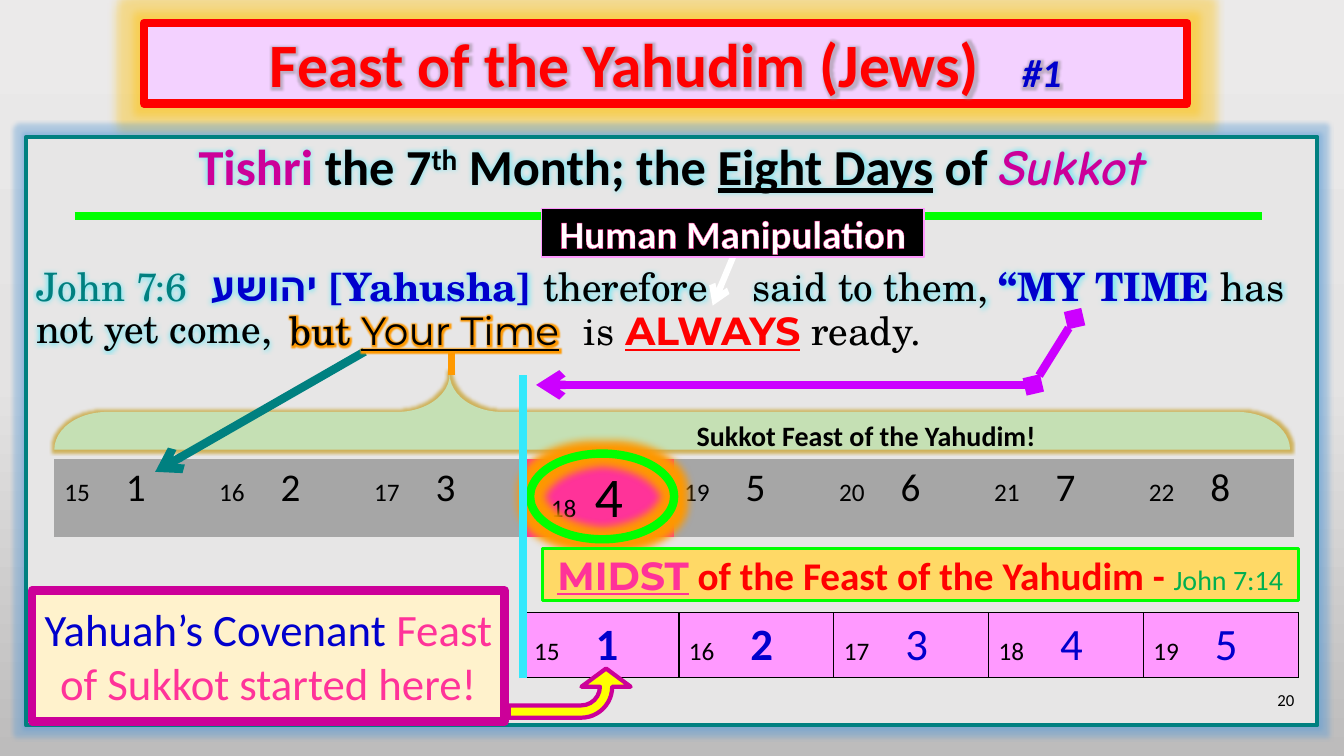
import copy
from dataclasses import dataclass

import pptx
import pptx.dml.color
import pptx.enum.shapes
import pptx.enum.text
import pptx.oxml
import pptx.oxml.ns
import pptx.util
from pptx.util import Cm

RGBColor = pptx.dml.color.RGBColor
SHAPE = pptx.enum.shapes.MSO_SHAPE
ALIGN = pptx.enum.text.PP_ALIGN
ANCHOR = pptx.enum.text.MSO_ANCHOR
qn = pptx.oxml.ns.qn

BLACK, WHITE = RGBColor(0, 0, 0), RGBColor(255, 255, 255)
RED, BLUE = RGBColor(255, 0, 0), RGBColor(0, 0, 0xCC)
MAGENTA, PINK = RGBColor(0xCC, 0, 0x99), RGBColor(0xFF, 0x33, 0x99)
TEAL, LIME = RGBColor(0, 0x80, 0x80), RGBColor(0, 255, 0)
PURPLE, ORANGE = RGBColor(0xCC, 0, 255), RGBColor(0xFF, 0x99, 0)
CYAN, GREEN = RGBColor(0x34, 0xE9, 0xFC), RGBColor(0, 0xB0, 0x50)
YELLOW, GOLD = RGBColor(255, 255, 0), RGBColor(0xFF, 0xC0, 0)
AMBER, CREAM = RGBColor(0xFF, 0xD9, 0x66), RGBColor(0xFF, 0xF2, 0xCC)
LILAC, ORCHID = RGBColor(0xF3, 0xD1, 0xFF), RGBColor(0xFF, 0x99, 0xFF)
SAGE, OCHRE = RGBColor(0xC5, 0xE0, 0xB4), RGBColor(0xBF, 0x90, 0)
PANEL, GRAY = RGBColor(0xE7, 0xE6, 0xE6), RGBColor(0xA6, 0xA6, 0xA6)
SKY, SHADE = RGBColor(0x5B, 0x9B, 0xD5), RGBColor(0x80, 0x80, 0x80)
BACKGROUND = (RGBColor(0xEB, 0xEA, 0xEA), RGBColor(0xE4, 0xE3, 0xE3), RGBColor(0xBD, 0xBC, 0xBC))
SANS, SERIF, ROUND, WIDE = "Calibri", "TeX Gyre Schola", "Comic Neue", "Montserrat"


@dataclass
class Box:
    """A region in centimetres; areas are given relative to its corner."""
    left: float
    top: float
    width: float
    height: float

    def area(self, x, y, width, height):
        return Cm(self.left + x), Cm(self.top + y), Cm(width), Cm(height)

    def whole(self):
        return self.area(0, 0, self.width, self.height)


def xml(text):
    return pptx.oxml.parse_xml(f'<a:root {pptx.oxml.ns.nsdecls("a")}>{text}</a:root>')[0]


def glow_xml(color, points, opacity):
    return (f'<a:glow rad="{int(points * 12700)}"><a:srgbClr val="{color}">'
            f'<a:alpha val="{opacity * 1000}"/></a:srgbClr></a:glow>')


def add_run(paragraph, text, size, color, font=SANS, bold=False, italic=False,
            underline=False, raised=False, spacing=0, outline=None, glow=None):
    run = paragraph.add_run()
    run.text = text
    run.font.size, run.font.name = pptx.util.Pt(size), font
    run.font.bold, run.font.italic, run.font.underline = bold, italic, underline
    run.font.color.rgb = color
    properties = run._r.get_or_add_rPr()
    if raised:
        properties.set("baseline", "30000")
    if spacing:
        properties.set("spc", str(spacing * 100))
    if glow:
        properties.find(qn("a:solidFill")).addnext(
            xml(f"<a:effectLst>{glow_xml(*glow)}</a:effectLst>"))
    if outline:
        properties.insert(0, xml(f'<a:ln w="9525"><a:solidFill><a:srgbClr val="{outline}"/>'
                                 '</a:solidFill></a:ln>'))


def add_tab(paragraph, centimetres):
    paragraph._p.get_or_add_pPr().append(
        xml(f'<a:tabLst><a:tab pos="{Cm(centimetres)}" algn="l"/></a:tabLst>'))


def write(shape, runs, align=ALIGN.CENTER, anchor=ANCHOR.MIDDLE, **shared):
    frame = shape.text_frame
    frame.word_wrap, frame.vertical_anchor = True, anchor
    paragraph = frame.paragraphs[0]
    paragraph.alignment = align
    for text, size, color, style in runs:
        add_run(paragraph, text, size, color, **{**shared, **style})
    return paragraph


def add_shape(slide, kind, place, fill=None, line=None, width=0, glow=None):
    shape = slide.shapes.add_shape(kind, *place)
    shape.shadow.inherit = False
    if fill is None:
        shape.fill.background()
    else:
        shape.fill.solid()
        shape.fill.fore_color.rgb = fill
    if line is None:
        shape.line.fill.background()
    else:
        shape.line.color.rgb, shape.line.width = line, pptx.util.Pt(width)
    if glow:
        shape._element.spPr.find(qn("a:effectLst")).append(xml(glow_xml(*glow)))
    return shape


def add_line(slide, box, start, end, color, width, head=None, tail=None):
    x1, y1, x2, y2 = (*box.area(*start, 0, 0)[:2], *box.area(*end, 0, 0)[:2])
    line = slide.shapes.add_connector(pptx.enum.shapes.MSO_CONNECTOR.STRAIGHT, x1, y1, x2, y2)
    line.line.color.rgb, line.line.width = color, pptx.util.Pt(width)
    for tag, kind in (("headEnd", head), ("tailEnd", tail)):
        if kind:
            line._element.spPr.find(qn("a:ln")).append(xml(f'<a:{tag} type="{kind}"/>'))
    line._element.spPr.append(xml("<a:effectLst/>"))


def add_days(slide, place, days, border):
    """One table row; each day is (date, number, size, color, bold, fill, margin, tab)."""
    table = slide.shapes.add_table(1, len(days), *place).table
    table.first_row = table.horz_banding = False
    for cell, (date, number, size, color, bold, fill, margin, tab) in zip(table.iter_cells(), days):
        cell.margin_left = Cm(margin)
        paragraph = cell.text_frame.paragraphs[0]
        add_tab(paragraph, tab)
        add_run(paragraph, f"{date}\t", 18, BLACK)
        add_run(paragraph, str(number), size, color, bold=bold)
        cell.fill.solid()
        cell.fill.fore_color.rgb = fill
        for index, side in enumerate("LRTB"):
            cell._tc.tcPr.insert(index, xml(f'<a:ln{side} w="12700">{border}</a:ln{side}>'))


def draw_background(slide):
    fill = slide.background.fill
    fill.gradient()
    fill.gradient_angle = 270
    stops = slide._element.xpath(".//p:bgPr//a:gsLst")[0]
    stops.insert(1, copy.deepcopy(stops[0]))
    for index, (stop, color) in enumerate(zip(fill.gradient_stops, BACKGROUND)):
        stop.position, stop.color.rgb = index / 2, color


def draw_title(slide, box):
    title = add_shape(slide, SHAPE.RECTANGLE, box.whole(), LILAC, RED, 6, (GOLD, 12, 40))
    write(title, [("Feast of the Yahudim", 44, RED, {"outline": BLACK}),
                  (" (Jews)", 44, RED, {}), (" ", 44, RED, {"spacing": 20}),
                  ("#1", 28, BLUE, {"italic": True})], bold=True, glow=(SHADE, 6, 45))


def draw_scripture(slide, box):
    glow = (CYAN, 5, 60)
    panel = add_shape(slide, SHAPE.RECTANGLE, box.whole(), PANEL, TEAL, 3, (SKY, 5, 40))
    heading = write(panel, [
        ("Tishri", 36, MAGENTA, {}), (" the 7", 36, BLACK, {}), ("th", 36, BLACK, {"raised": True}),
        (" Month; the ", 36, BLACK, {}), ("Eight Days", 36, BLACK, {"underline": True}),
        (" of ", 36, BLACK, {}), ("Sukkot", 36, MAGENTA, {"font": ROUND, "italic": True})],
        anchor=ANCHOR.TOP, bold=True, glow=glow)
    verse = panel.text_frame.add_paragraph()
    verse.alignment, verse.space_before = ALIGN.LEFT, pptx.util.Pt(51)
    heading.line_spacing = verse.line_spacing = 0.9
    add_tab(verse, 17.78)
    for text, color, font, bold, spacing in (
            ("John 7:6", TEAL, SERIF, False, 0), (" ", TEAL, SERIF, False, 8),
            ("יהושע ", BLUE, SANS, True, 0), ("[Yahusha] ", BLUE, SERIF, True, 0),
            ("therefore \t said to them, ", BLACK, SERIF, False, 0),
            ("“MY TIME ", BLUE, SERIF, True, 0), ("has not yet come,", BLACK, SERIF, False, 0)):
        add_run(verse, text, 28, color, font, bold, spacing=spacing, glow=glow)
    add_line(slide, box, (1.22, 1.99), (31.14, 1.99), LIME, 6)


def draw_sukkot_feast(slide, box):
    # Brace lies on its side: turned about its own centre
    length, depth = 31.14, 1.9
    place = box.area((length - depth) / 2, (depth - length) / 2, depth, length)
    brace = add_shape(slide, SHAPE.RIGHT_BRACE, place, SAGE, glow=(OCHRE, 4, 60))
    brace.rotation = 270
    brace.adjustments[0], brace.adjustments[1] = 0.7, 0.32
    label = slide.shapes.add_textbox(*box.area(15.47, 1.09, 9.98, 0.91))
    write(label, [("Sukkot Feast of the Yahudim!", 20, BLACK, {"bold": True})])
    # Eight days, the fourth one marked
    days = [(14 + day, day, 28, BLACK, False, GRAY, 0.25, 1.55) for day in range(1, 9)]
    days[3] = (18, 4, 40, BLACK, False, PINK, 0.8, 1.1)
    add_days(slide, box.area(0, 2.13, box.width, 1.96), days, "<a:noFill/>")
    add_shape(slide, SHAPE.OVAL, box.area(11.99, 2, 3.63, 2.16), None, LIME, 6, (ORANGE, 12, 100))


def draw_covenant_feast(slide, box):
    banner = add_shape(slide, SHAPE.RECTANGLE, box.area(12.86, 0, 19.05, 1.32), AMBER, LIME, 2.25)
    write(banner, [("MIDST", 28, PINK, {"font": WIDE, "bold": True, "underline": True}),
                   (" of the Feast of the Yahudim - ", 28, RED, {"bold": True}),
                   ("John 7:14", 20, GREEN, {})])
    callout = add_shape(slide, SHAPE.RECTANGLE, box.area(0, 1.06, 11.91, 3.3), CREAM, MAGENTA, 6)
    write(callout, [("Yahuah’s Covenant ", 32, BLUE, {}),
                    ("Feast of Sukkot started here!", 32, PINK, {})])
    days = [(14 + day, day, 32, BLUE, day < 3, ORCHID, 0.25, 1.55) for day in range(1, 6)]
    add_days(slide, box.area(12.4, 1.62, 19.51, 1.63), days,
             f'<a:solidFill><a:srgbClr val="{BLACK}"/></a:solidFill>')
    arrow = add_shape(slide, SHAPE.BENT_ARROW, box.area(12.93, 2.11, 1.24, 3.07), YELLOW, MAGENTA, 3)
    arrow.rotation = 90
    arrow._element.spPr.xfrm.set("flipH", "1")
    for index, value in enumerate((0.25, 0.5, 0.37, 0.63)):
        arrow.adjustments[index] = value
    number = slide.shapes.add_textbox(*box.area(24.44, 3.3, 7.62, 1.02))
    write(number, [("20", 12, BLACK, {})], align=ALIGN.RIGHT)


def draw_pointers(slide, box):
    add_line(slide, box, (25.38, 6.25), (12.85, 6.25), PURPLE, 6, tail="arrow")
    add_line(slide, box, (26.42, 4.58), (25.38, 6.25), PURPLE, 6, "diamond", "diamond")
    add_line(slide, box, (8.53, 5.41), (3.25, 8.44), TEAL, 6, tail="arrow")
    add_line(slide, box, (12.52, 13.64), (12.52, 6), CYAN, 6)
    add_line(slide, box, (17.81, 3.03), (17.3, 4.25), WHITE, 4.5, tail="arrow")
    add_line(slide, box, (10.72, 6), (10.72, 5.41), ORANGE, 4.5)
    # Phrases the pointers start from
    human = add_shape(slide, SHAPE.RECTANGLE, box.area(12.98, 1.81, 9.65, 1.22), BLACK, ORCHID, 1)
    write(human, [("Human Manipulation", 28, WHITE, {"bold": True, "outline": PINK})])
    your_time = slide.shapes.add_textbox(*box.area(5.97, 4.27, 8.13, 1.19))
    write(your_time, [("but ", 28, BLACK, {"font": SERIF}),
                      ("Your Time", 28, BLACK, {"font": WIDE, "underline": True})],
          glow=(ORANGE, 6, 100))
    always = slide.shapes.add_textbox(*box.area(13.72, 4.12, 9.17, 1.5))
    write(always, [("is ", 28, BLACK, {"font": SERIF}),
                   ("ALWAYS", 28, RED, {"font": WIDE, "bold": True, "underline": True}),
                   (" ready.", 28, BLACK, {"font": SERIF})])


def main():
    presentation = pptx.Presentation()
    presentation.slide_width, presentation.slide_height = Cm(33.87), Cm(19.05)
    slide = presentation.slides.add_slide(presentation.slide_layouts[6])
    panel = Box(0.66, 3.45, 32.54, 14.83)
    draw_background(slide)
    draw_title(slide, Box(3.63, 0.58, 26.29, 2.03))
    draw_scripture(slide, panel)
    draw_sukkot_feast(slide, Box(1.37, 9.43, 31.24, 4.09))
    draw_covenant_feast(slide, Box(0.81, 13.82, 31.91, 4.36))
    draw_pointers(slide, panel)
    presentation.save("out.pptx")


if __name__ == "__main__":
    main()
